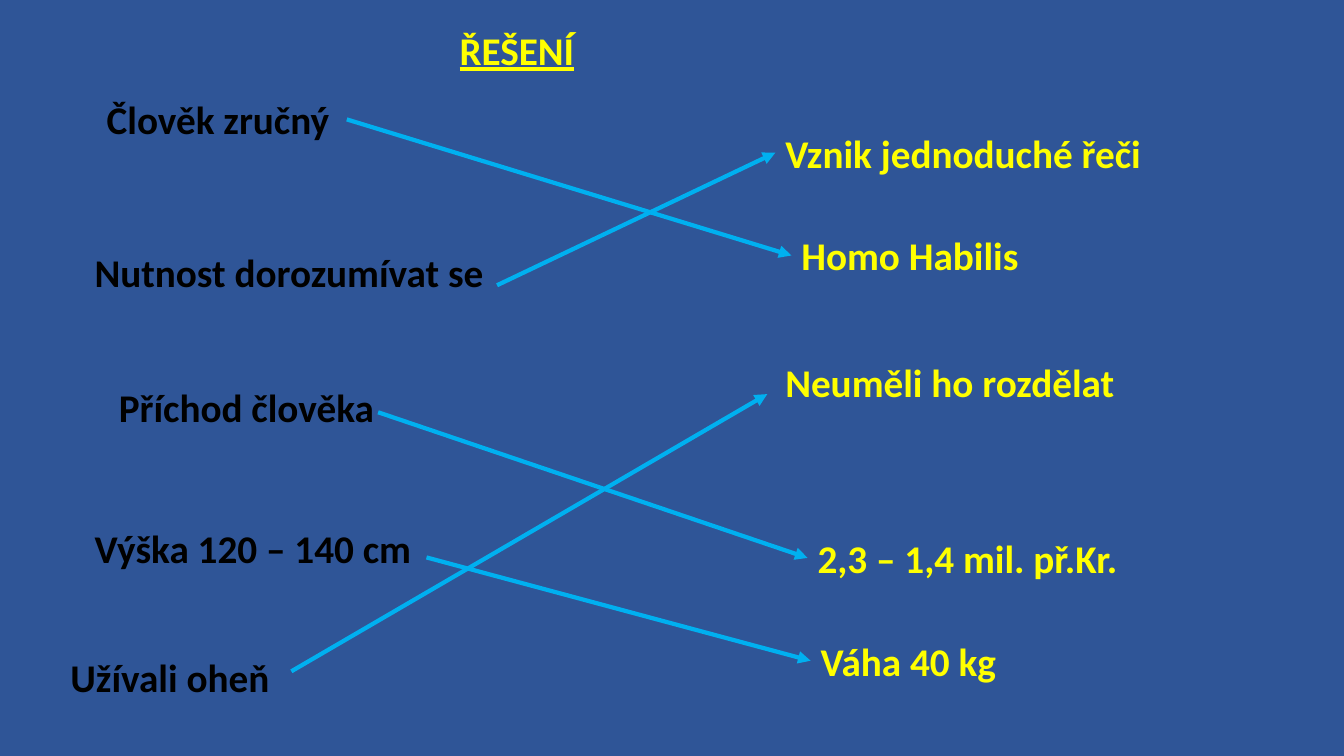
"""Build the answer slide that matches terms about Homo habilis."""
from lxml import etree
from pptx import Presentation
from pptx.dml.color import RGBColor
from pptx.enum import shapes, text
from pptx.oxml import ns
from pptx.util import Inches, Pt

BLUE = RGBColor(0x2F, 0x55, 0x97)
YELLOW = RGBColor(0xFF, 0xFF, 0x00)
BLACK = RGBColor(0x00, 0x00, 0x00)
SKY = RGBColor(0x00, 0xB0, 0xF0)

LABEL_HEIGHT = 0.57
RIGHT_SIDE, LEFT_SIDE = 3, 1

TERMS = {
    "Člověk zručný": (0.96, 0.9, 2.48),
    "Nutnost dorozumívat se": (0.84, 2.41, 4.33),
    "Příchod člověka": (1.08, 3.75, 3.78),
    "Výška 120 – 140 cm": (0.84, 5.15, 4.65),
    "Užívali oheň": (0.6, 6.43, 5.28),
}
ANSWERS = {
    "Vznik jednoduché řeči": (7.69, 1.23, 4.49),
    "Homo Habilis": (7.85, 2.25, 4.33),
    "Neuměli ho rozdělat": (7.69, 3.51, 4.33),
    "2,3 – 1,4 mil. př.Kr.": (8.01, 5.25, 3.31),
    "Váha 40 kg": (8.04, 6.27, 2.56),
}


def add_label(slide, wording, place, color, underline=None):
    """Add a bold one-line label and return its shape."""
    left, top, width = map(Inches, place)
    shape = slide.shapes.add_textbox(left, top, width, Inches(LABEL_HEIGHT))
    frame = shape.text_frame
    frame.word_wrap = True
    frame.auto_size = text.MSO_AUTO_SIZE.SHAPE_TO_FIT_TEXT
    frame.text = wording
    font = frame.paragraphs[0].runs[0].font
    font.color.rgb = color
    formats = {"name": "Calibri", "size": Pt(28), "bold": True, "underline": underline}
    for name, value in formats.items():
        setattr(font, name, value)
    return shape


def add_arrow(slide, start, end):
    """Add an arrow between two points and return its connector."""
    connector = slide.shapes.add_connector(
        shapes.MSO_CONNECTOR.STRAIGHT, *map(Inches, start + end))
    connector.line.color.rgb = SKY
    connector.line.width = Pt(3)
    line = connector.line._get_or_add_ln()
    etree.SubElement(line, ns.qn("a:tailEnd"), type="triangle")
    etree.SubElement(connector._element.spPr, ns.qn("a:effectLst"))
    return connector


def main():
    """Build and save the slide."""
    presentation = Presentation()
    presentation.slide_width = Inches(13.33)
    presentation.slide_height = Inches(7.5)
    slide = presentation.slides.add_slide(presentation.slide_layouts[6])
    slide.background.fill.solid()
    slide.background.fill.fore_color.rgb = BLUE

    add_label(slide, "ŘEŠENÍ", (4.46, 0.21, 1.65), YELLOW, underline=True)
    labels = {}
    for group, color in ((TERMS, BLACK), (ANSWERS, YELLOW)):
        for wording, place in group.items():
            labels[wording] = add_label(slide, wording, place, color)

    first = add_arrow(slide, (3.44, 1.19), (7.85, 2.54))
    first.begin_connect(labels["Člověk zručný"], RIGHT_SIDE)
    first.end_connect(labels["Homo Habilis"], LEFT_SIDE)
    for start, end, answer in (
        ((4.93, 2.83), (7.69, 1.52), "Vznik jednoduché řeči"),
        ((3.75, 4.09), (8.01, 5.53), "2,3 – 1,4 mil. př.Kr."),
        ((4.23, 5.53), (8.04, 6.56), "Váha 40 kg"),
    ):
        add_arrow(slide, start, end).end_connect(labels[answer], LEFT_SIDE)
    add_arrow(slide, (2.89, 6.66), (7.61, 3.91))

    presentation.save("out.pptx")


if __name__ == "__main__":
    main()
